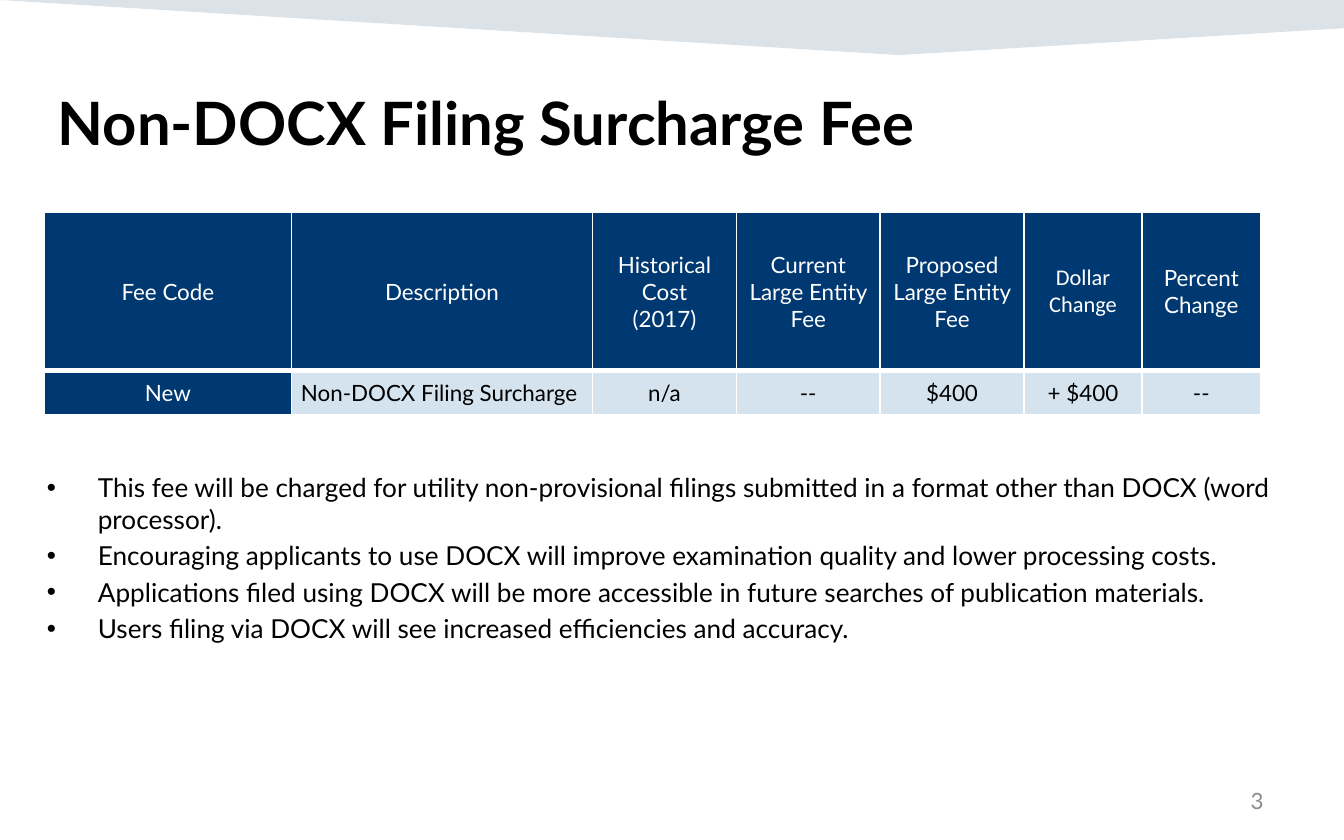
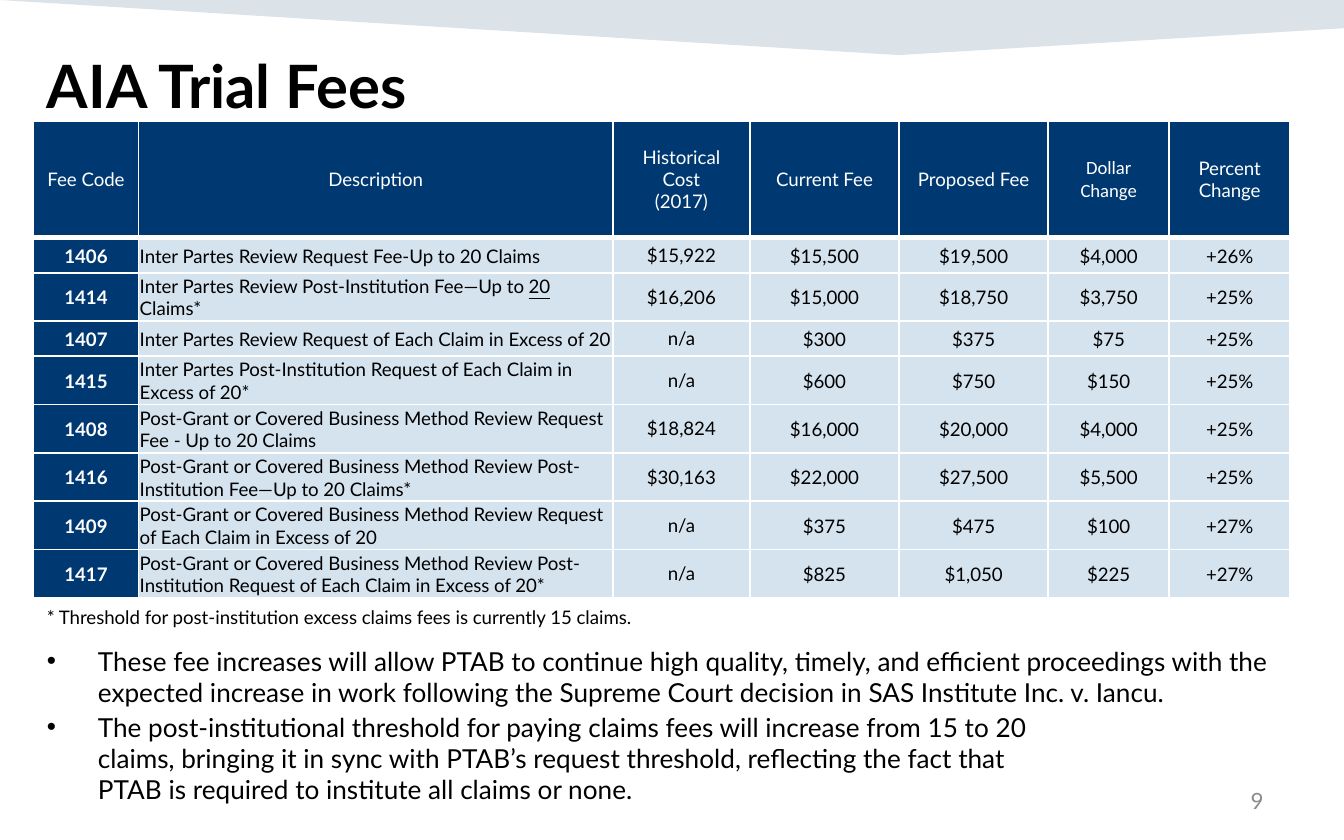
from lxml import etree
from pptx import Presentation
from pptx.dml.color import RGBColor
from pptx.enum.text import MSO_ANCHOR, PP_ALIGN
from pptx.oxml.ns import qn
from pptx.util import Inches, Pt

LEFT, CENTER, RIGHT = PP_ALIGN.LEFT, PP_ALIGN.CENTER, PP_ALIGN.RIGHT
TOP, MIDDLE = MSO_ANCHOR.TOP, MSO_ANCHOR.MIDDLE

FONT, ALT_FONT = "Lato", "Calibri"
BLACK, WHITE, GREY = "000000", "FFFFFF", "8C8C8C"
NAVY, PALE, BAND = "003971", "D5E3EE", "164469"
BAND_POINTS = [(0, 0), (10, 0), (10, 0.21), (6.69, 0.41)]
BAND_OPACITY = 15
DESCRIPTION, HISTORICAL = 1, 2
HEADER_MARGINS = (0.07, 0, 0.07, 0)
TIGHT_MARGINS = (0.01, 0.01, 0.01, 0)

# Underscores enclose underlined words; a line break starts a new paragraph.
SURCHARGE = {
    "title": "Non-DOCX Filing Surcharge Fee",
    "title_box": (0.33, 0.59, 9.22, 0.8),
    "page": "3",
    "table": {
        "at": (0.33, 1.58),
        "cols": [1.84, 2.24, 1.07, 1.07, 1.07, 0.88, 0.88],
        "heights": [1.18, 0.33],
        "size": 12,
        "margins": HEADER_MARGINS,
        "bold_codes": False,
        "rows": [
            ("Fee Code", "Description", "Historical Cost\n(2017)", "Current Large Entity Fee",
             "Proposed Large Entity Fee", "Dollar Change", "Percent Change"),
            ("New", "Non-DOCX Filing Surcharge", "n/a", "--", "$400", "+ $400", "--"),
        ],
    },
    "bullets": [
        ((0.25, 3.46, 9.57, 2.34), [
            "This fee will be charged for utility non-provisional filings submitted in a format "
            "other than DOCX (word processor).",
            "Encouraging applicants to use DOCX will improve examination quality and lower "
            "processing costs.",
            "Applications filed using DOCX will be more accessible in future searches of "
            "publication materials.",
            "Users filing via DOCX will see increased efficiencies and accuracy.",
        ]),
    ],
}

TRIALS = {
    "title": "AIA Trial Fees",
    "title_box": (0.25, 0.26, 9.75, 0.97),
    "title_end_size": 36,
    "page": "9",
    "table": {
        "at": (0.25, 0.9),
        "cols": [0.78, 3.53, 1.02, 1.11, 1.11, 0.9, 0.9],
        "heights": [0.87, 0.26, 0.36, 0.26] + [0.36] * 5,
        "size": 10,
        "margins": TIGHT_MARGINS,
        "bold_codes": True,
        "rows": [
            ("Fee Code", "Description", "Historical Cost\n(2017)", "Current Fee",
             "Proposed Fee", "Dollar Change", "Percent Change"),
            ("1406", "Inter Partes Review Request Fee-Up to 20 Claims",
             "$15,922", "$15,500", "$19,500", "$4,000", "+26%"),
            ("1414", "Inter Partes Review Post-Institution Fee—Up to _20_ Claims*",
             "$16,206", "$15,000", "$18,750", "$3,750", "+25%"),
            ("1407", "Inter Partes Review Request of Each Claim in Excess of 20",
             "n/a", "$300", "$375", "$75", "+25%"),
            ("1415", "Inter Partes Post-Institution Request of Each Claim in Excess of _20_*",
             "n/a", "$600", "$750", "$150", "+25%"),
            ("1408", "Post-Grant or Covered Business Method Review Request Fee - Up to 20 Claims",
             "$18,824", "$16,000", "$20,000", "$4,000", "+25%"),
            ("1416", "Post-Grant or Covered Business Method Review Post-Institution "
             "Fee—Up to _20_ Claims*",
             "$30,163", "$22,000", "$27,500", "$5,500", "+25%"),
            ("1409", "Post-Grant or Covered Business Method Review Request of Each Claim "
             "in Excess of 20",
             "n/a", "$375", "$475", "$100", "+27%"),
            ("1417", "Post-Grant or Covered Business Method Review Post-Institution Request "
             "of Each Claim in Excess of _20_*",
             "n/a", "$825", "$1,050", "$225", "+27%"),
        ],
    },
    "note": ((0.25, 4.46, 9.34, 0.29),
             "* Threshold for post-institution excess claims fees is currently 15 claims."),
    "bullets": [
        ((0.25, 4.75, 9.58, 0.68), [
            "These fee increases will allow PTAB to continue high quality, timely, and efficient "
            "proceedings with the expected increase in work following the Supreme Court decision "
            "in SAS Institute Inc. v. Iancu.",
        ]),
        ((0.25, 5.24, 7.81, 0.81), [
            "The post-institutional threshold for paying claims fees will increase from 15 to 20 "
            "claims, bringing it in sync with PTAB’s request threshold, reflecting the fact that "
            "PTAB is required to institute all claims or none.",
        ]),
    ],
}


def rgb(color):
    return RGBColor.from_string(color)


def add_run(p, text, size, color=BLACK, bold=False, font=FONT, underline=False):
    r = p.add_run()
    r.text = text
    r.font.name, r.font.size, r.font.bold = font, Pt(size), bold
    r.font.color.rgb = rgb(color)
    if underline:
        r.font.underline = True


def add_paragraphs(tf, lines, size, align=LEFT, **style):
    for i, line in enumerate(lines):
        p = tf.paragraphs[0] if i == 0 else tf.add_paragraph()
        p.alignment = align
        for j, part in enumerate(line.split("_")):
            add_run(p, part, size, underline=j % 2 == 1, **style)


def add_text(s, box, lines, size, align=LEFT, anchor=TOP, **style):
    tf = s.shapes.add_textbox(*map(Inches, box)).text_frame
    tf.word_wrap = True
    tf.vertical_anchor = anchor
    add_paragraphs(tf, lines, size, align, **style)
    return tf


def add_bullets(s, box, lines):
    tf = add_text(s, box, lines, 14)
    for i, p in enumerate(tf.paragraphs):
        if i:
            p.space_before = Pt(2.8)
        pPr = p._p.get_or_add_pPr()
        pPr.set("marL", str(Inches(0.38)))
        pPr.set("indent", str(-Inches(0.38)))
        etree.SubElement(pPr, qn("a:buFont")).set("typeface", "Arial")
        etree.SubElement(pPr, qn("a:buChar")).set("char", "•")


def add_band(s):
    start, *rest = [(Inches(x), Inches(y)) for x, y in BAND_POINTS]
    builder = s.shapes.build_freeform(*start)
    builder.add_line_segments(rest, close=True)
    sp = builder.convert_to_shape()
    sp.shadow.inherit = False
    sp.line.fill.background()
    sp.fill.solid()
    sp.fill.fore_color.rgb = rgb(BAND)
    color = sp.fill._xPr.find(".//" + qn("a:srgbClr"))
    etree.SubElement(color, qn("a:alpha")).set("val", str(BAND_OPACITY * 1000))


def style_cell(cell, fill, margins, bottom_width):
    cell.vertical_anchor = MIDDLE
    (cell.margin_left, cell.margin_top,
     cell.margin_right, cell.margin_bottom) = map(Inches, margins)
    tcPr = cell._tc.get_or_add_tcPr()
    for side, width in (("L", 1), ("R", 1), ("T", 1), ("B", bottom_width)):
        ln = etree.SubElement(tcPr, qn("a:ln" + side), w=str(Pt(width)))
        solid = etree.SubElement(ln, qn("a:solidFill"))
        etree.SubElement(solid, qn("a:srgbClr"), val=WHITE)
    cell.fill.solid()
    cell.fill.fore_color.rgb = rgb(fill)


def add_fee_table(s, at, cols, heights, size, margins, bold_codes, rows):
    box = (*at, sum(cols), sum(heights))
    table = s.shapes.add_table(len(rows), len(cols), *map(Inches, box)).table
    table.first_row = table.horz_banding = False
    for column, width in zip(table.columns, cols):
        column.width = Inches(width)
    for row, height in zip(table.rows, heights):
        row.height = Inches(height)
    for i, row in enumerate(rows):
        for j, text in enumerate(row):
            cell = table.cell(i, j)
            header = i == 0
            dark = header or j == 0
            wide = header or j == HISTORICAL
            style_cell(cell, NAVY if dark else PALE,
                       HEADER_MARGINS if wide else margins, 3 if header else 1)
            add_paragraphs(cell.text_frame, text.split("\n"), size,
                           LEFT if j == DESCRIPTION and not header else CENTER,
                           color=WHITE if dark else BLACK,
                           bold=bold_codes and j == 0 and not header,
                           font=ALT_FONT if text == "Dollar Change" else FONT)


def add_fee_slide(prs, content):
    s = prs.slides.add_slide(prs.slide_layouts[6])
    s.background.fill.solid()
    s.background.fill.fore_color.rgb = rgb(WHITE)
    add_band(s)
    add_text(s, (7.17, 5.79, 2.33, 0.33), [content["page"]], 12, RIGHT, MIDDLE, color=GREY)
    add_fee_table(s, **content["table"])
    if "note" in content:
        box, note = content["note"]
        add_text(s, box, [note], 10)
    for box, lines in content["bullets"]:
        add_bullets(s, box, lines)
    title = add_text(s, content["title_box"], [content["title"]], 32, bold=True)
    if "title_end_size" in content:
        add_run(title.paragraphs[0], " ", content["title_end_size"], bold=True)


def main():
    prs = Presentation()
    prs.slide_width, prs.slide_height = Inches(10), Inches(6.25)
    for content in (SURCHARGE, TRIALS):
        add_fee_slide(prs, content)
    prs.save("out.pptx")


if __name__ == "__main__":
    main()
